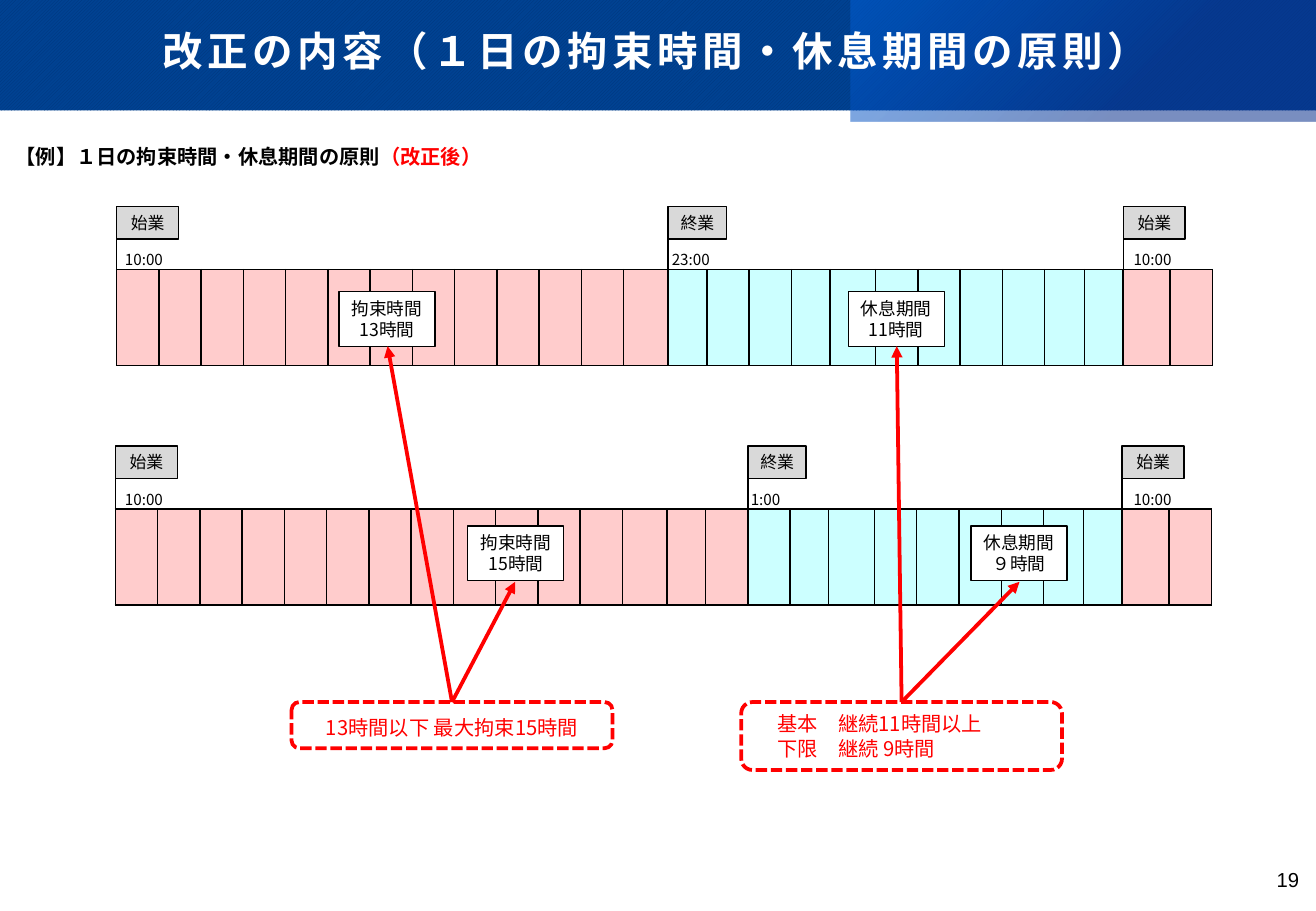
from lxml import etree
from pptx import Presentation
from pptx.dml.color import RGBColor
from pptx.enum.dml import MSO_LINE, MSO_PATTERN
from pptx.enum.shapes import MSO_CONNECTOR, MSO_SHAPE
from pptx.enum.text import MSO_ANCHOR, PP_ALIGN
from pptx.oxml import parse_xml
from pptx.oxml.ns import nsdecls, qn
from pptx.util import Inches, Pt

RECT, ROUND = MSO_SHAPE.RECTANGLE, MSO_SHAPE.ROUNDED_RECTANGLE
LEFT, CENTER, RIGHT = PP_ALIGN.LEFT, PP_ALIGN.CENTER, PP_ALIGN.RIGHT
TOP, MIDDLE = MSO_ANCHOR.TOP, MSO_ANCHOR.MIDDLE
JP_FONT = "Noto Sans CJK JP"
COLORS = {
    "black": "000000", "white": "FFFFFF", "red": "FF0000", "tag": "D9D9D9",
    "duty": "FFCCCC", "rest": "CCFFFF", "band": "004292", "band_hatch": "003579",
    "glow": "0064DF", "glow_end": "0C338E",
}
RGB = {name: RGBColor.from_string(value) for name, value in COLORS.items()}

prs = Presentation()
prs.slide_width, prs.slide_height = Inches(10.83), Inches(7.5)
s = prs.slides.add_slide(prs.slide_layouts[6])


def add_text(box, paragraphs, shape=None, size=12, color="black", bold=False, align=LEFT,
             anchor=MIDDLE, font=JP_FONT, fill=None, line=None, width=1, dash=None,
             inset=(0.1, 0.05), indent=0, leading=None, after=0, tracking=None):
    """Adds a text box, or a preset shape; a paragraph is a list of (text, color) runs or a string."""
    at = [Inches(v) for v in box]
    if shape is None:
        sp = s.shapes.add_textbox(*at)
    else:
        sp = s.shapes.add_shape(shape, *at)
        sp.shadow.inherit = False
        sp.line.color.rgb, sp.line.width = RGB[line], Pt(width)
        if dash:
            sp.line.dash_style = dash
        if fill:
            sp.fill.solid()
            sp.fill.fore_color.rgb = RGB[fill]
        else:
            sp.fill.background()
    tf = sp.text_frame
    tf.word_wrap, tf.vertical_anchor = True, anchor
    tf.margin_left, tf.margin_right = Inches(inset[0] + indent), Inches(inset[0])
    tf.margin_top = tf.margin_bottom = Inches(inset[1])
    for i, runs in enumerate(paragraphs):
        p = tf.add_paragraph() if i else tf.paragraphs[0]
        p.alignment, p.space_after = align, Pt(after)
        if leading:
            p.line_spacing = leading
        for text, run_color in [(runs, color)] if isinstance(runs, str) else runs:
            r = p.add_run()
            r.text = text
            r.font.name, r.font.size, r.font.bold = font, Pt(size), bold
            r.font.color.rgb = RGB[run_color]
            rpr = r.font._element
            rpr.find(qn("a:latin")).addnext(
                parse_xml(f'<a:ea {nsdecls("a")} typeface="{font}"/>'))
            if tracking:
                rpr.set("spc", str(tracking))


def add_line(start, end, color="black", width=1, arrow=False):
    ends = [Inches(v) for v in (*start, *end)]
    c = s.shapes.add_connector(MSO_CONNECTOR.STRAIGHT, *ends)
    c.line.color.rgb, c.line.width = RGB[color], Pt(width)
    if arrow:
        etree.SubElement(c.line._get_or_add_ln(), qn("a:tailEnd"), type="triangle")
    etree.SubElement(c._element.spPr, qn("a:effectLst"))


# Title band
band = s.shapes.add_shape(RECT, 0, 0, prs.slide_width, Inches(0.91))
band.shadow.inherit = False
band.line.fill.background()
band.fill.patterned()
band.fill.pattern = MSO_PATTERN.DARK_UPWARD_DIAGONAL
band.fill.fore_color.rgb, band.fill.back_color.rgb = RGB["band_hatch"], RGB["band"]

builder = s.shapes.build_freeform(7.49, 0.01, scale=Inches(1))
builder.add_line_segments([(10.83, 0), (10.83, 0.91), (6.58, 0.91)], close=True)
glow = builder.convert_to_shape()
glow.shadow.inherit = False
glow.line.fill.background()
stops = "".join(
    f'<a:gs pos="{pos}"><a:srgbClr val="{COLORS[name]}"><a:alpha val="{alpha}"/></a:srgbClr></a:gs>'
    for pos, name, alpha in [(0, "glow", 50000), (62000, "glow_end", 55000)])
glow._element.spPr.find(qn("a:custGeom")).addnext(parse_xml(
    f'<a:gradFill {nsdecls("a")}><a:gsLst>{stops}</a:gsLst><a:path path="circle">'
    '<a:fillToRect r="100000" b="100000"/></a:path></a:gradFill>'))

add_text((-0.02, 0.22, 10.83, 0.46), ["改正の内容（１日の拘束時間・休息期間の原則）"], size=24,
         color="white", bold=True, align=CENTER, leading=0.8, tracking=270)
add_text((0.03, 1.14, 4.21, 0.3),
         [[("【例】１日の拘束時間・休息期間の原則", "black"), ("（改正後）", "red")]],
         bold=True, anchor=TOP)
add_text((10, 7.14, 0.69, 0.3), ["19"], font="Arial", align=RIGHT, anchor=TOP, inset=(0, 0))

# Timelines: one column an hour, from one start of work to the next
BAR_WIDTH, BAR_HEIGHT, NEXT_START = 9.02, 0.79, 24
hours = [0.35] * 12 + [0.37, 0.32, 0.35, 0.35, 0.32, 0.38] + [0.35] * 4 + [0.33, 0.32, 0.39, 0.35]
hours = [w * BAR_WIDTH / sum(hours) for w in hours]

timelines = [
    # left, top, duty hours, end time, end time left, time top, label top, labels
    (0.96, 2.22, 13, "23:00", 5.43, 2.01, 2.4, [(2.79, "拘束時間", "13時間"), (6.98, "休息期間", "11時間")]),
    (0.95, 4.19, 15, "1:00", 6.08, 3.99, 4.33, [(3.85, "拘束時間", "15時間"), (7.99, "休息期間", "９時間")]),
]
for left, top, duty, end_time, end_left, time_top, label_top, labels in timelines:
    frame = s.shapes.add_table(1, len(hours), Inches(left), Inches(top),
                               Inches(BAR_WIDTH), Inches(BAR_HEIGHT))
    table = frame.table
    table.first_row = table.horz_banding = False
    for i, w in enumerate(hours):
        table.columns[i].width = Inches(w)
        cell = table.cell(0, i)
        cell.fill.solid()
        cell.fill.fore_color.rgb = RGB["rest" if duty <= i < NEXT_START else "duty"]
        for n, side in enumerate(["lnL", "lnR", "lnT", "lnB"]):
            cell._tc.tcPr.insert(n, parse_xml(
                f'<a:{side} {nsdecls("a")} w="12700"><a:solidFill>'
                f'<a:srgbClr val="{COLORS["black"]}"/></a:solidFill></a:{side}>'))

    for label_left, name, length in labels:
        add_text((label_left, label_top, 0.79, 0.45), [name, length], RECT, size=10.5,
                 align=CENTER, fill="white", line="black", width=0.75)

    tag_top = top - 0.52
    marks = [(0, "始業", 0.51, 0.13, "10:00", 0.93),
             (duty, "終業", 0.48, 0.07, end_time, end_left),
             (NEXT_START, "始業", 0.51, 0.2, "10:00", 9.23)]
    for hour, name, tag_width, drop, time, time_left in marks:
        x = left + sum(hours[:hour])
        add_text((time_left, time_top, 0.59, 0.28), [time], size=9, anchor=TOP)
        add_text((x, tag_top, tag_width, 0.27), [name], RECT, size=10, align=CENTER,
                 fill="tag", line="black", inset=(0.05, 0.05))
        add_line((x, tag_top + drop), (x, tag_top + drop + 0.67))

# Rules and arrows to the labels
rule = dict(shape=ROUND, color="red", line="red", width=2.25, dash=MSO_LINE.SQUARE_DOT)
add_text((2.4, 5.78, 2.64, 0.38), ["13時間以下 最大拘束15時間"],
         align=CENTER, leading=1.2, after=6, **rule)
add_text((6.1, 5.78, 2.64, 0.56), ["基本　継続11時間以上", "下限　継続 9時間"], indent=0.17, **rule)
for x, targets in [(3.72, [(4.24, 4.79), (3.19, 2.85)]), (7.42, [(8.39, 4.79), (7.38, 2.85)])]:
    for target in targets:
        add_line((x, 5.78), target, color="red", width=2.25, arrow=True)

prs.save("out.pptx")
